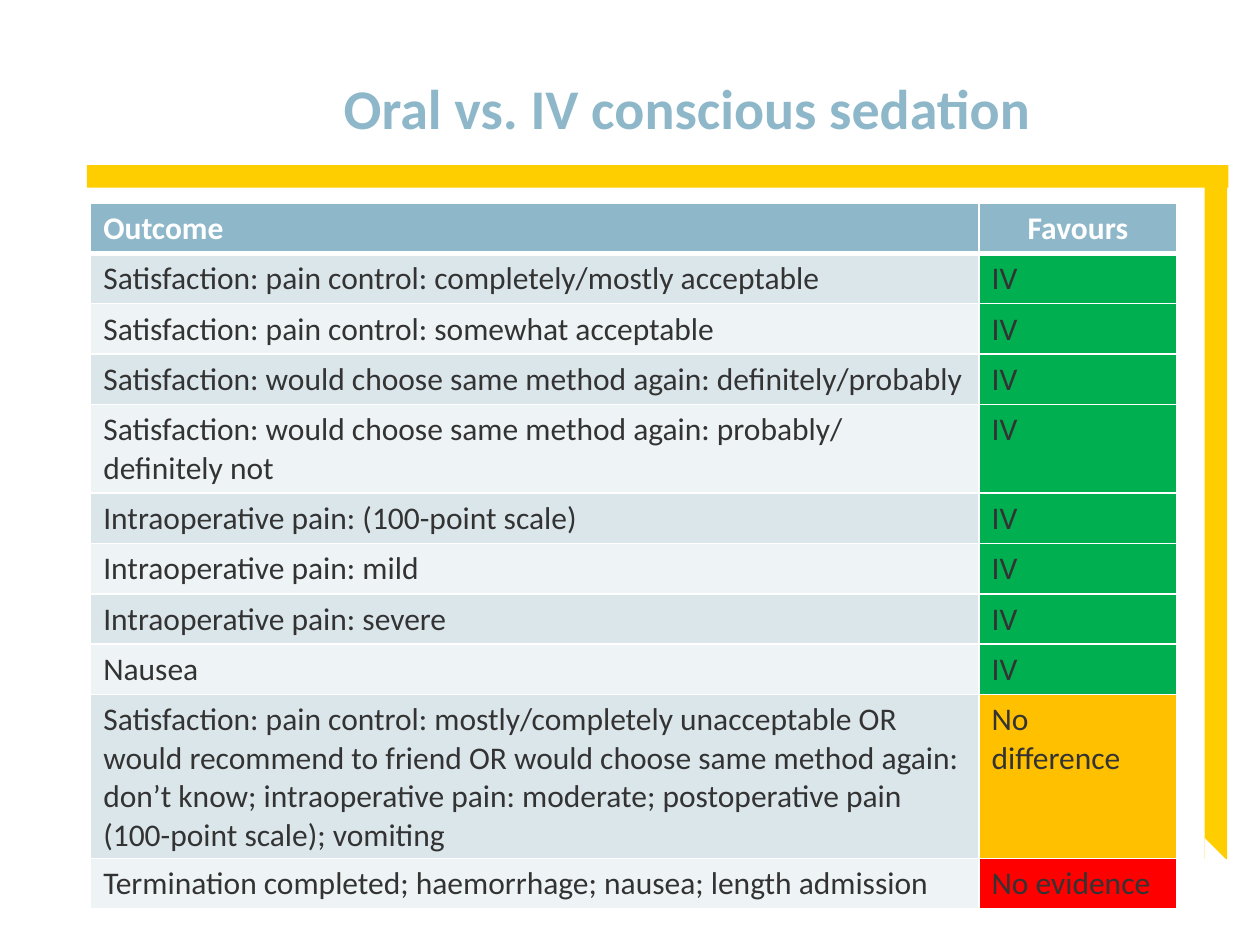
from dataclasses import dataclass

from lxml import etree
from pptx import Presentation
from pptx.dml.color import RGBColor
from pptx.enum import shapes, text
from pptx.oxml.ns import qn
from pptx.util import Inches, Pt


@dataclass(frozen=True)
class Theme:
    font: str = "Calibri"
    title_size: int = 32
    body_size: int = 18
    blue: str = "8EB8C9"
    yellow: str = "FFCE00"
    white: str = "FFFFFF"
    ink: str = "333333"
    bands: tuple = ("DBE6EB", "EEF3F5")
    green: str = "00B050"
    amber: str = "FFC000"
    red: str = "FF0000"


theme = Theme()


def write(p, words, size, color, bold):
    r = p.add_run()
    r.text = words
    for name, value in {"name": theme.font, "size": Pt(size), "bold": bold}.items():
        setattr(r.font, name, value)
    r.font.color.rgb = RGBColor.from_string(color)


def set_borders(cell, widths):
    """Draw white cell borders; widths in points for left, right, top, bottom."""
    tcPr = cell._tc.get_or_add_tcPr()
    for i, (side, width) in enumerate(zip("LRTB", widths)):
        ln = etree.Element(qn(f"a:ln{side}"), w=str(Pt(width)))
        fill = etree.SubElement(ln, qn("a:solidFill"))
        etree.SubElement(fill, qn("a:srgbClr"), val=theme.white)
        tcPr.insert(i, ln)


prs = Presentation()
prs.slide_width, prs.slide_height = Inches(10), Inches(7.5)
s = prs.slides.add_slide(prs.slide_layouts[6])

# Yellow frame with a slanted lower end
for kind, box, color in [
    (shapes.MSO_SHAPE.RECTANGLE, (0.69, 1.31, 9.06, 0.18), theme.yellow),
    (shapes.MSO_SHAPE.RECTANGLE, (9.56, 1.31, 0.18, 5.51), theme.yellow),
    (shapes.MSO_SHAPE.ISOSCELES_TRIANGLE, (9.56, 6.65, 0.18, 0.18), theme.white),
]:
    sp = s.shapes.add_shape(kind, *map(Inches, box))
    sp.shadow.inherit = False
    sp.fill.solid()
    sp.fill.fore_color.rgb = RGBColor.from_string(color)
    sp.line.fill.background()
    if kind == shapes.MSO_SHAPE.ISOSCELES_TRIANGLE:
        sp.adjustments[0] = 0

# Title
tf = s.shapes.add_textbox(*map(Inches, (2.63, 0.13, 7.04, 1.04))).text_frame
tf.word_wrap = True
tf.vertical_anchor = text.MSO_ANCHOR.BOTTOM
p = tf.paragraphs[0]
p.line_spacing = 0.9
write(p, "Oral vs. IV conscious sedation", theme.title_size, theme.blue, True)

# Outcomes: wording, favoured method, number of text lines
verdict_fills = {"IV": theme.green, "No difference": theme.amber, "No evidence": theme.red}
rows = [
    ("Outcome", "Favours", 1),
    ("Satisfaction: pain control: completely/mostly acceptable", "IV", 1),
    ("Satisfaction: pain control: somewhat acceptable", "IV", 1),
    ("Satisfaction: would choose same method again: definitely/probably", "IV", 1),
    ("Satisfaction: would choose same method again: probably/ definitely not", "IV", 2),
    ("Intraoperative pain: (100-point scale)", "IV", 1),
    ("Intraoperative pain: mild", "IV", 1),
    ("Intraoperative pain: severe", "IV", 1),
    ("Nausea", "IV", 1),
    ("Satisfaction: pain control: mostly/completely unacceptable OR would recommend "
     "to friend OR would choose same method again: don’t know; intraoperative pain: "
     "moderate; postoperative pain (100-point scale); vomiting", "No difference", 4),
    ("Termination completed; haemorrhage; nausea; length admission", "No evidence", 1),
]
table = s.shapes.add_table(len(rows), 2, *map(Inches, (0.72, 1.61, 8.62, 5.6))).table
for column, width in zip(table.columns, (7.05, 1.57)):
    column.width = Inches(width)

for i, (outcome, favours, lines) in enumerate(rows):
    header = i == 0
    table.rows[i].height = Inches(0.1 + 0.3 * lines)
    band = theme.bands[(i - 1) % 2]
    fills = (theme.blue,) * 2 if header else (band, verdict_fills[favours])
    for j, (words, fill) in enumerate(zip((outcome, favours), fills)):
        cell = table.cell(i, j)
        set_borders(cell, (1, 1, 3 if i == 1 else 1, 3 if header else 1))
        cell.fill.solid()
        cell.fill.fore_color.rgb = RGBColor.from_string(fill)
        p = cell.text_frame.paragraphs[0]
        if header and j == 1:
            p.alignment = text.PP_ALIGN.CENTER
        write(p, words, theme.body_size, theme.white if header else theme.ink, header)

prs.save("out.pptx")
